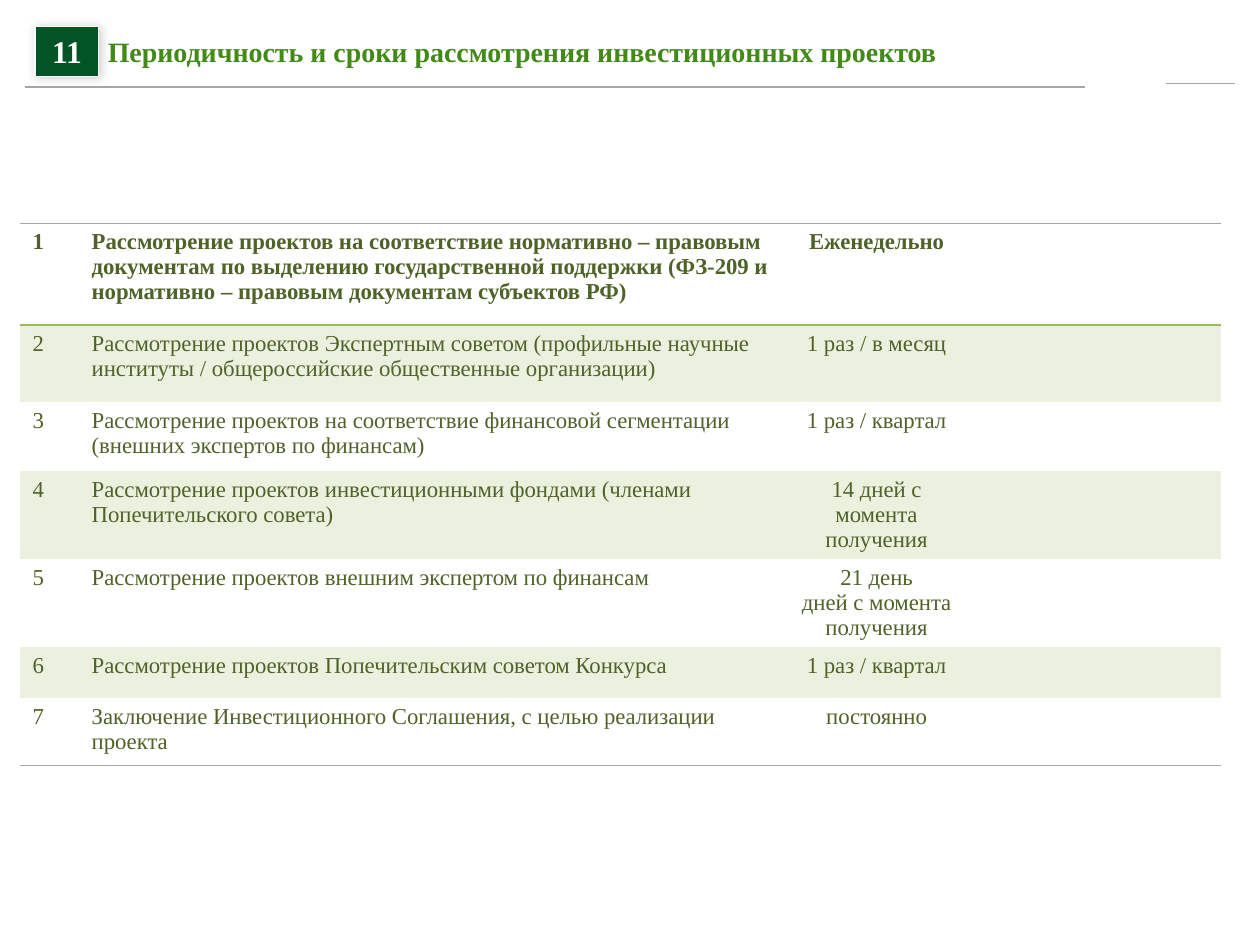
from lxml import etree
from pptx import Presentation
from pptx.dml.color import RGBColor
from pptx.enum.shapes import MSO_CONNECTOR, MSO_SHAPE
from pptx.enum.text import MSO_ANCHOR, PP_ALIGN
from pptx.oxml import parse_xml
from pptx.oxml.ns import nsdecls, qn
from pptx.util import Pt

STRAIGHT = MSO_CONNECTOR.STRAIGHT
RECTANGLE = MSO_SHAPE.RECTANGLE
MIDDLE = MSO_ANCHOR.MIDDLE
LEFT, CENTER = PP_ALIGN.LEFT, PP_ALIGN.CENTER
GREY, GREEN, BAND, TEXT = "A6A6A6", "9BBB59", "EBF1DE", "4F6228"


def color(value):
    return RGBColor.from_string(value)


def add_text(paragraph, text, size, text_color, bold, align=LEFT):
    paragraph.alignment = align
    run = paragraph.add_run()
    run.text = text
    run.font.name = "Times New Roman"
    run.font.size = Pt(size)
    run.font.bold = bold
    run.font.color.rgb = color(text_color)


presentation = Presentation()
presentation.slide_width, presentation.slide_height = Pt(720), Pt(540)
slide = presentation.slides.add_slide(presentation.slide_layouts[6])

# Header rules
for start, end, top in [(14.4, 620, 49.7), (666.5, 705.6, 47.7)]:
    rule = slide.shapes.add_connector(STRAIGHT, Pt(start), Pt(top), Pt(end), Pt(top))
    rule.line.color.rgb = color(GREY)
    rule.line.width = Pt(1)
    etree.SubElement(rule._element.spPr, qn("a:effectLst"))

# Schedule table
rows = [
    (58.3, "Рассмотрение проектов на соответствие нормативно – правовым документам по выделению "
           "государственной поддержки (ФЗ-209 и нормативно – правовым документам субъектов РФ)",
     ["Еженедельно"]),
    (44, "Рассмотрение проектов Экспертным советом (профильные научные институты / "
         "общероссийские общественные организации)", ["1 раз / в месяц"]),
    (39.6, "Рассмотрение проектов на соответствие финансовой сегментации "
           "(внешних экспертов по финансам)", ["1 раз / квартал"]),
    (50, "Рассмотрение проектов инвестиционными фондами (членами Попечительского совета)",
     ["14 дней с момента получения"]),
    (50, "Рассмотрение проектов внешним экспертом по финансам",
     ["21 день", "дней с момента получения"]),
    (29.5, "Рассмотрение проектов Попечительским советом Конкурса", ["1 раз / квартал"]),
    (38.3, "Заключение Инвестиционного Соглашения, с целью реализации проекта", ["постоянно"]),
]
widths = [33.8, 402.2, 107, 143.2]
table = slide.shapes.add_table(
    len(rows), len(widths), Pt(11.4), Pt(127.5),
    Pt(sum(widths)), Pt(sum(row[0] for row in rows))).table
table.first_row = table.horz_banding = False
for column, width in zip(table.columns, widths):
    column.width = Pt(width)

# Horizontal rules by edge number: above, under the first row, below
edges = {0: (GREY, 0.75), 1: (GREEN, 1), len(rows): (GREY, 0.75)}
for index, (height, stage, terms) in enumerate(rows):
    table.rows[index].height = Pt(height)
    contents = [([str(index + 1)], LEFT), ([stage], LEFT), (terms, CENTER), ([], LEFT)]
    for cell, (lines, align) in zip(table.rows[index].cells, contents):
        properties = cell._tc.get_or_add_tcPr()
        for side, edge in [("L", None), ("R", None), ("T", index), ("B", index + 1)]:
            border = etree.SubElement(properties, qn(f"a:ln{side}"))
            if edge in edges:
                border_color, border_width = edges[edge]
                border.set("w", str(Pt(border_width)))
                fill = etree.SubElement(border, qn("a:solidFill"))
                etree.SubElement(fill, qn("a:srgbClr"), val=border_color)
            else:
                etree.SubElement(border, qn("a:noFill"))
        if index % 2:
            cell.fill.solid()
            cell.fill.fore_color.rgb = color(BAND)
        else:
            cell.fill.background()
        frame = cell.text_frame
        for number, line in enumerate(lines):
            paragraph = frame.add_paragraph() if number else frame.paragraphs[0]
            add_text(paragraph, line, 13, TEXT, index == 0, align)

# Number badge with a soft shadow
badge = slide.shapes.add_shape(RECTANGLE, Pt(20), Pt(15), Pt(36.5), Pt(28.8))
badge.fill.solid()
badge.fill.fore_color.rgb = color("005426")
badge.line.color.rgb = color("FFFFFF")
badge.line.width = Pt(0.75)
badge._element.spPr.append(parse_xml(
    f'<a:effectLst {nsdecls("a")}><a:outerShdw blurRad="{Pt(6)}" dist="{Pt(1)}" dir="2700000">'
    '<a:srgbClr val="000000"><a:alpha val="20000"/></a:srgbClr></a:outerShdw></a:effectLst>'))
badge.text_frame.vertical_anchor = MIDDLE
add_text(badge.text_frame.paragraphs[0], "11", 18, "FFFFFF", True, CENTER)

# Title, inset to clear the badge
title = slide.shapes.add_textbox(Pt(14.4), Pt(16), Pt(597), Pt(26.6))
title.text_frame.word_wrap = True
title.text_frame.vertical_anchor = MIDDLE
title.text_frame.margin_left = Pt(47.2)
add_text(title.text_frame.paragraphs[0],
         "Периодичность и сроки рассмотрения инвестиционных проектов", 16, "418A18", True)

presentation.save("out.pptx")
